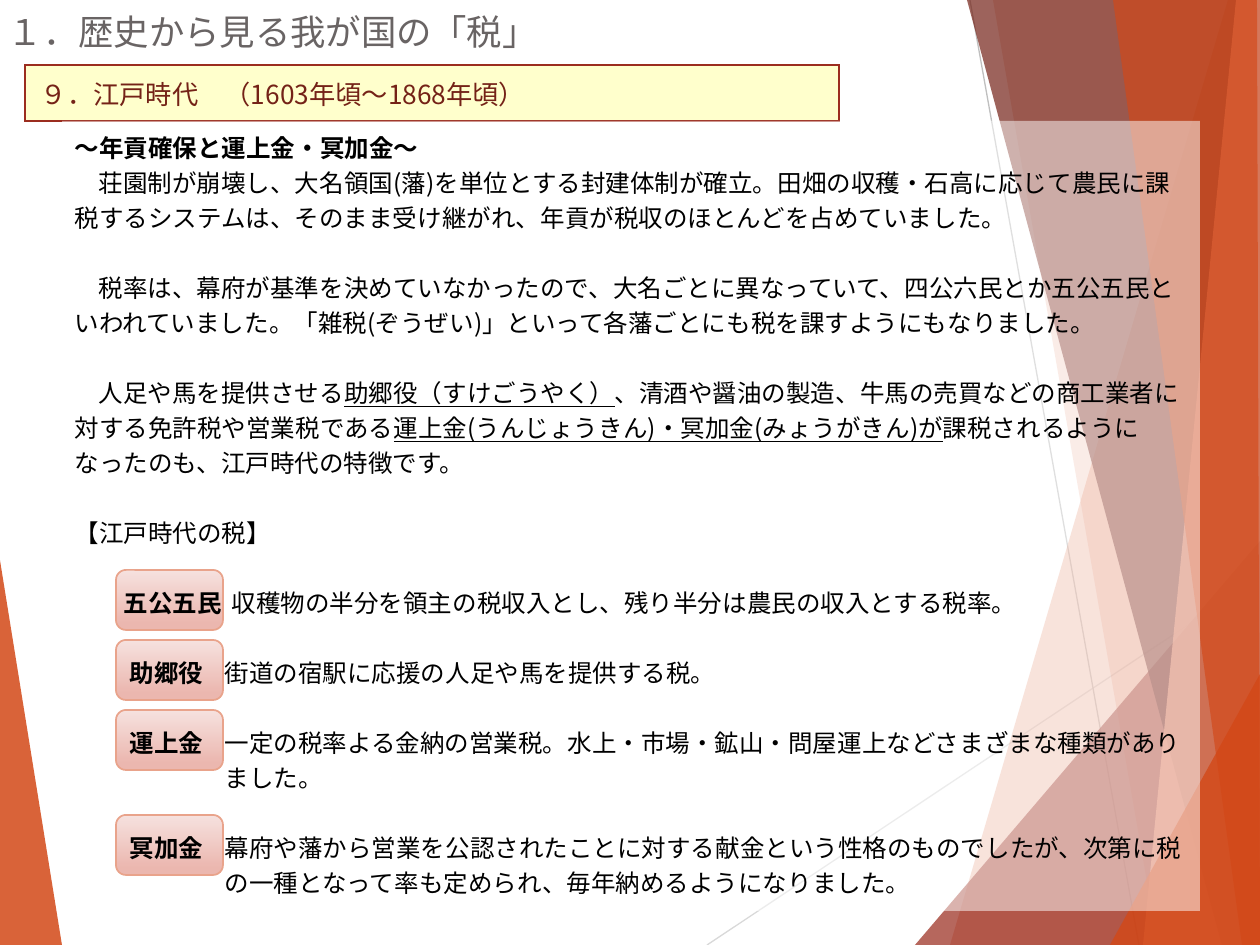
from lxml import etree
from pptx import Presentation
from pptx import util as u
from pptx.dml.color import RGBColor
from pptx.enum import lang, shapes, text
from pptx.oxml import ns

PX = 914400 / 126
FONT = "Noto Sans CJK JP"

WHITE = RGBColor(0xFF, 0xFF, 0xFF)
BLACK = RGBColor(0x00, 0x00, 0x00)
GREY = RGBColor(0x69, 0x64, 0x64)
LIGHT_GREY = RGBColor(0xD9, 0xD9, 0xD9)
MID_GREY = RGBColor(0xBF, 0xBF, 0xBF)
CREAM = RGBColor(0xFF, 0xFF, 0xCC)
ORANGE = RGBColor(0xD3, 0x48, 0x17)
SALMON = RGBColor(0xEF, 0x8C, 0x6A)
RED = RGBColor(0x9B, 0x2D, 0x1F)
MAROON = RGBColor(0x74, 0x22, 0x17)
PINK = RGBColor(0xED, 0xC5, 0xC0)
ROSE = RGBColor(0xD8, 0x6F, 0x5F)

LEFT_WEDGE = (ORANGE, 85, [(0, 560), (62, 945), (0, 945)])
RAYS = [
    (LIGHT_GREY, (707, 945), (1260, 577)),
    (MID_GREY, (970, 0), (1139, 945)),
]
RIGHT_BANDS = [
    (ORANGE, 30, [(1228, 0), (950, 945), (1260, 945), (1260, 0)]),
    (ORANGE, 20, [(993, 0), (1158, 945), (1260, 945), (1260, 0)]),
    (RED, 72, [(915, 945), (1260, 541), (1260, 945)]),
    (MAROON, 70, [(967, 0), (1222, 945), (1260, 945), (1260, 0)]),
    (SALMON, 70, [(1236, 0), (1143, 945), (1260, 945), (1260, 0)]),
    (ORANGE, 65, [(1113, 0), (1242, 945), (1260, 945), (1257, 0)]),
    (ORANGE, 80, [(1110, 945), (1260, 674), (1260, 945)]),
]

BOLD = {"bold": True}
UNDERLINED = {"underline": True}
LINE_HEIGHT = 35
LINE_POINTS = u.Pt(20)
FULL_WIDTH = 24  # one full-width character of body text
# Each paragraph: first-line indent, blank lines before, runs
PROSE = [
    (0, 0, [("～年貢確保と運上金・冥加金～", BOLD)]),
    (FULL_WIDTH, 0, [("荘園制が崩壊し、大名領国(藩)を単位とする封建体制が確立。田畑の収穫・石高に"
                      "応じて農民に課税するシステムは、そのまま受け継がれ、年貢が税収のほとんどを"
                      "占めていました。", {})]),
    (FULL_WIDTH, 1, [("税率は、幕府が基準を決めていなかったので、大名ごとに異なっていて、四公六民とか"
                      "五公五民といわれていました。「雑税(ぞうぜい)」といって各藩ごとにも税を課す"
                      "ようにもなりました。", {})]),
    (FULL_WIDTH, 1, [("人足や馬を提供させる", {}),
                     ("助郷役（すけごうやく）", UNDERLINED),
                     ("、清酒や醤油の製造、牛馬の売買などの商工業者に対する免許税や営業税である", {}),
                     ("運上金(うんじょうきん)・冥加金(みょうがきん)が", UNDERLINED),
                     ("課税されるようになったのも、江戸時代の特徴です。", {})]),
    (0, 1, [("【江戸時代の税】", {})]),
]
# Each tax: label, label start, text start, lines above its box, explanation
TAXES = [
    ("五公五民", 49, 157, 0, "収穫物の半分を領主の税収入とし、残り半分は農民の収入とする税率。"),
    ("助郷役", 55, 150, 2, "街道の宿駅に応援の人足や馬を提供する税。"),
    ("運上金", 55, 150, 4, "一定の税率よる金納の営業税。水上・市場・鉱山・問屋運上などさまざまな種類が"
                        "ありました。"),
    ("冥加金", 55, 150, 7, "幕府や藩から営業を公認されたことに対する献金という性格のものでしたが、"
                        "次第に税の一種となって率も定められ、毎年納めるようになりました。"),
]


def px(*lengths):
    return [u.Emu(round(length * PX)) for length in lengths]


def set_format(target, **values):
    for name, value in values.items():
        setattr(target, name, value)


def set_box(shape, *box):
    set_format(shape, **dict(zip(("left", "top", "width", "height"), px(*box))))


def fill_solid(shape, color, opacity=100):
    shape.fill.solid()
    shape.fill.fore_color.rgb = color
    if opacity < 100:
        srgb = shape.fill._xPr.find(".//" + ns.qn("a:srgbClr"))
        etree.SubElement(srgb, ns.qn("a:alpha"), val=str(opacity * 1000))


def add_run(paragraph, words, size, color, **style):
    run = paragraph.add_run()
    run.text = words
    set_format(run.font, name=FONT, size=u.Pt(size),
               language_id=lang.MSO_LANGUAGE_ID.JAPANESE, **style)
    run.font.color.rgb = color
    etree.SubElement(run.font._rPr, ns.qn("a:ea"), typeface=FONT)


def add_band(slide, color, opacity, points):
    builder = slide.shapes.build_freeform(*points[0], scale=PX)
    builder.add_line_segments(points[1:], close=True)
    band = builder.convert_to_shape()
    band.shadow.inherit = False
    fill_solid(band, color, opacity)
    band.line.fill.background()


def add_ray(slide, color, start, end):
    ray = slide.shapes.add_connector(shapes.MSO_CONNECTOR.STRAIGHT, *px(*start, *end))
    ray.line.color.rgb = color
    ray.line.width = u.Pt(0.75)
    etree.SubElement(ray._element.spPr, ns.qn("a:effectLst"))


def place_title(slide):
    title = slide.shapes.title
    slide.shapes._spTree.append(title._element)  # in front of the bands
    set_box(title, 0, 3, 689, 57)
    set_format(title.text_frame, margin_left=px(8)[0], margin_right=0, margin_top=0,
               margin_bottom=0, vertical_anchor=text.MSO_ANCHOR.MIDDLE,
               auto_size=text.MSO_AUTO_SIZE.NONE)
    paragraph = title.text_frame.paragraphs[0]
    paragraph.alignment = text.PP_ALIGN.LEFT
    add_run(paragraph, "１．歴史から見る我が国の「税」", 20.2, GREY)


def add_era_table(slide):
    table = slide.shapes.add_table(1, 1, *px(25, 65, 814, 55)).table
    set_format(table, first_row=False, horz_banding=False)
    cell = table.cell(0, 0)
    side, edge = px(16, 9)
    set_format(cell, margin_left=side, margin_right=side, margin_top=edge, margin_bottom=edge)
    properties = cell._tc.get_or_add_tcPr()
    for border in ("lnL", "lnR", "lnT", "lnB"):
        line = etree.SubElement(properties, ns.qn("a:" + border), w=str(u.Pt(1)))
        solid = etree.SubElement(line, ns.qn("a:solidFill"))
        etree.SubElement(solid, ns.qn("a:srgbClr"), val=str(RED))
    fill_solid(cell, CREAM)
    add_run(cell.text_frame.paragraphs[0], "９．江戸時代　（1603年頃～1868年頃）", 15, MAROON)


def add_label_box(slide, lines_above):
    top = 570 + lines_above * LINE_HEIGHT
    box = slide.shapes.add_shape(shapes.MSO_SHAPE.ROUNDED_RECTANGLE, *px(116, top, 107, 60))
    box.shadow.inherit = False
    box.fill.gradient()
    box.fill.gradient_angle = 270
    for stop, position, color in zip(box.fill.gradient_stops, (0, 0.88), (PINK, ROSE)):
        stop.position = position
        stop.color.rgb = color
    box.line.color.rgb = ORANGE
    box.line.width = u.Pt(1)


def format_body_paragraph(paragraph, blank_lines, first, hanging=0):
    set_format(paragraph, line_spacing=LINE_POINTS, space_before=LINE_POINTS * blank_lines,
               space_after=u.Pt(0), alignment=text.PP_ALIGN.LEFT)
    properties = paragraph._p.get_or_add_pPr()
    margin, indent = px(hanging, first - hanging)
    properties.set("marL", str(margin))
    properties.set("indent", str(indent))
    etree.SubElement(properties, ns.qn("a:buNone"))


def place_body(slide):
    body = slide.placeholders[1]
    slide.shapes._spTree.append(body._element)  # veils the label boxes
    set_box(body, 62, 121, 1138, 790)
    fill_solid(body, WHITE, 50)
    frame = body.text_frame
    set_format(frame, word_wrap=True, auto_size=text.MSO_AUTO_SIZE.NONE,
               vertical_anchor=text.MSO_ANCHOR.TOP)
    rows = [(blank, first, 0, runs) for first, blank, runs in PROSE]
    rows += [(1, first, hanging, [(label, BOLD), ("\t" + meaning, {})])
             for label, first, hanging, _, meaning in TAXES]
    for index, (blank, first, hanging, runs) in enumerate(rows):
        paragraph = frame.add_paragraph() if index else frame.paragraphs[0]
        format_body_paragraph(paragraph, blank, first, hanging)
        for words, style in runs:
            add_run(paragraph, words, 14, BLACK, **style)


def main():
    presentation = Presentation()
    set_format(presentation, slide_width=u.Inches(10), slide_height=u.Inches(7.5))
    slide = presentation.slides.add_slide(presentation.slide_layouts[1])
    add_band(slide, *LEFT_WEDGE)
    for ray in RAYS:
        add_ray(slide, *ray)
    for band in RIGHT_BANDS:
        add_band(slide, *band)
    place_title(slide)
    add_era_table(slide)
    for _, _, _, lines_above, _ in TAXES:
        add_label_box(slide, lines_above)
    place_body(slide)
    presentation.save("out.pptx")


if __name__ == "__main__":
    main()
